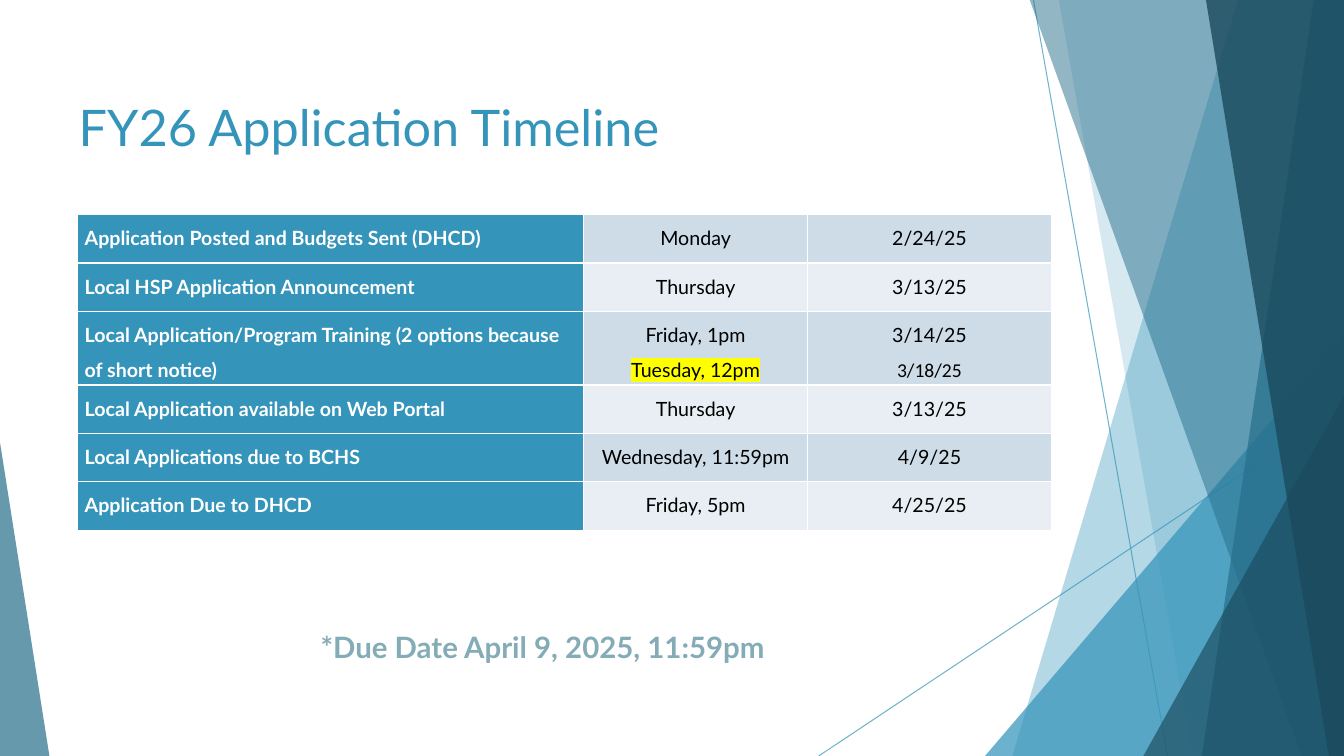
import pptx
import pptx.util
import pptx.dml.color
import pptx.enum.shapes
import pptx.enum.text
import pptx.oxml.ns
from lxml import etree

Inches = pptx.util.Inches
Pt = pptx.util.Pt
PP_ALIGN = pptx.enum.text.PP_ALIGN
ANCHOR = pptx.enum.text.MSO_ANCHOR
qn = pptx.oxml.ns.qn

WIDTH, HEIGHT = 13.33, 7.5
FONT = "Lato"
COLORS = {
    "blue": "3494BA",
    "deep": "276F8B",
    "dark": "1A4A5D",
    "note": "84ACB6",
    "band_a": "CEDCE7",
    "band_b": "E8EEF3",
    "white": "FFFFFF",
    "black": "000000",
    "yellow": "FFFF00",
}
COL_WIDTHS = [5.02, 2.22, 2.42]
ROW_HEIGHT, TALL_ROW_HEIGHT = 0.48, 0.73
TIMELINE = [
    ("Application Posted and Budgets Sent (DHCD)", ["Monday"], ["2/24/25"]),
    ("Local HSP Application Announcement", ["Thursday"], ["3/13/25"]),
    ("Local Application/Program Training (2 options because of short notice)",
     ["Friday, 1pm", "Tuesday, 12pm"], ["3/14/25", "3/18/25"]),
    ("Local Application available on Web Portal", ["Thursday"], ["3/13/25"]),
    ("Local Applications due to BCHS", ["Wednesday, 11:59pm"], ["4/9/25"]),
    ("Application Due to DHCD", ["Friday, 5pm"], ["4/25/25"]),
]
HIGHLIGHTED = "Tuesday, 12pm"
FONT_EXCEPTIONS = {"3/18/25": "Calibri"}


def rgb(name):
    return pptx.dml.color.RGBColor.from_string(COLORS[name])


def set_alpha(fill_parent, percent):
    clr = fill_parent.find(qn("a:solidFill"))[0]
    etree.SubElement(clr, qn("a:alpha")).set("val", str(percent * 1000))


def style_shape(sp, color, alpha):
    sp.shadow.inherit = False
    sp.fill.solid()
    sp.fill.fore_color.rgb = rgb(color)
    sp.line.fill.background()
    set_alpha(sp._element.spPr, alpha)


def add_panel(s, top_x, bottom_x, color, alpha):
    top = Inches(-0.01)
    fb = s.shapes.build_freeform(Inches(top_x), top)
    fb.add_line_segments([
        (Inches(WIDTH), top),
        (Inches(WIDTH), Inches(HEIGHT)),
        (Inches(bottom_x), Inches(HEIGHT)),
    ], close=True)
    style_shape(fb.convert_to_shape(), color, alpha)


def add_corner(s, x, y, w, apex, color, alpha):
    sp = s.shapes.add_shape(
        pptx.enum.shapes.MSO_SHAPE.ISOSCELES_TRIANGLE,
        Inches(x), Inches(y), Inches(w), Inches(HEIGHT - y))
    sp.adjustments[0] = apex
    style_shape(sp, color, alpha)


def add_hairline(s, x1, y1, x2, y2):
    cn = s.shapes.add_connector(
        pptx.enum.shapes.MSO_CONNECTOR.STRAIGHT,
        Inches(x1), Inches(y1), Inches(x2), Inches(y2))
    cn.line.color.rgb = rgb("blue")
    cn.line.width = Pt(0.75)
    sppr = cn._element.spPr
    set_alpha(sppr.find(qn("a:ln")), 70)
    etree.SubElement(sppr, qn("a:effectLst"))


def add_run(p, text, size, color, bold=False, font=FONT):
    r = p.add_run()
    r.text = text
    r.font.size = Pt(size)
    r.font.name = font
    r.font.bold = bold
    r.font.color.rgb = rgb(color)
    return r


def highlight(r):
    hl = etree.Element(qn("a:highlight"))
    etree.SubElement(hl, qn("a:srgbClr")).set("val", COLORS["yellow"])
    r.font._element.find(qn("a:solidFill")).addnext(hl)


def set_frame(tf, side, top, bottom):
    tf.word_wrap = True
    tf.auto_size = pptx.enum.text.MSO_AUTO_SIZE.NONE
    tf.vertical_anchor = ANCHOR.TOP
    tf.margin_left = tf.margin_right = Inches(side)
    tf.margin_top, tf.margin_bottom = Inches(top), Inches(bottom)


def add_title(s, text):
    sp = s.shapes.title
    sp.left, sp.top, sp.width, sp.height = map(Inches, (0.68, 0.93, 9.76, 0.88))
    set_frame(sp.text_frame, 0.1, 0.02, 0.05)
    p = sp.text_frame.paragraphs[0]
    p.alignment = PP_ALIGN.LEFT
    add_run(p, text, 36, "blue")


def add_note(s, text):
    sp = s.shapes.add_textbox(*map(Inches, (3.05, 5.76, 5.12, 1.3)))
    set_frame(sp.text_frame, 0.13, 0.48, 0.13)
    add_run(sp.text_frame.paragraphs[0], text, 21, "note", bold=True)


def add_borders(cell):
    tcpr = cell._tc.get_or_add_tcPr()
    for side in ("lnL", "lnR", "lnT", "lnB"):
        ln = etree.SubElement(tcpr, qn("a:" + side))
        ln.set("w", str(Pt(1)))
        fill = etree.SubElement(ln, qn("a:solidFill"))
        etree.SubElement(fill, qn("a:srgbClr")).set("val", COLORS["white"])


def fill_cell(cell, lines, fill, color, bold, align):
    add_borders(cell)
    cell.fill.solid()
    cell.fill.fore_color.rgb = rgb(fill)
    cell.margin_left = cell.margin_right = Inches(0.07)
    cell.margin_top = cell.margin_bottom = 0
    tf = cell.text_frame
    for i, text in enumerate(lines):
        p = tf.paragraphs[0] if i == 0 else tf.add_paragraph()
        p.alignment = align
        p.line_spacing = 1.5
        r = add_run(p, text, 14, color, bold, FONT_EXCEPTIONS.get(text, FONT))
        if text == HIGHLIGHTED:
            highlight(r)


def add_timeline(s):
    heights = [TALL_ROW_HEIGHT if len(days) > 1 else ROW_HEIGHT
               for _, days, _ in TIMELINE]
    frame = s.shapes.add_table(
        len(TIMELINE), len(COL_WIDTHS), Inches(0.77), Inches(2.13),
        Inches(sum(COL_WIDTHS)), Inches(sum(heights)))
    table = frame.table
    table.first_row = False
    table.first_col = True
    for col, width in zip(table.columns, COL_WIDTHS):
        col.width = Inches(width)
    for i, (step, days, dates) in enumerate(TIMELINE):
        table.rows[i].height = Inches(heights[i])
        fill_cell(table.cell(i, 0), [step], "blue", "white", True, PP_ALIGN.LEFT)
        band = "band_b" if i % 2 else "band_a"
        for j, lines in enumerate((days, dates), 1):
            fill_cell(table.cell(i, j), lines, band, "black", False,
                      PP_ALIGN.CENTER)


def add_backdrop(s):
    add_hairline(s, 10.25, 0, 11.58, HEIGHT)
    add_hairline(s, WIDTH, 4.03, 8.12, HEIGHT)
    add_panel(s, 12.28, 10.04, "blue", 36)
    add_panel(s, 10.5, 11.83, "blue", 20)
    add_corner(s, 9.77, 3.33, 3.56, 1, "blue", 72)
    add_panel(s, 10.21, 12.91, "deep", 50)
    add_panel(s, 13.03, 11.92, "deep", 70)
    add_panel(s, 11.96, 13.18, "dark", 80)
    add_corner(s, 11.34, 3.93, 1.99, 1, "dark", 66)
    add_corner(s, 0, 4.39, 0.49, 0, "deep", 70)


def main():
    prs = pptx.Presentation()
    prs.slide_width, prs.slide_height = Inches(WIDTH), Inches(HEIGHT)
    s = prs.slides.add_slide(prs.slide_layouts[5])
    add_backdrop(s)
    add_title(s, "FY26 Application Timeline")
    add_note(s, "*Due Date April 9, 2025, 11:59pm")
    add_timeline(s)
    prs.save("out.pptx")


if __name__ == "__main__":
    main()
